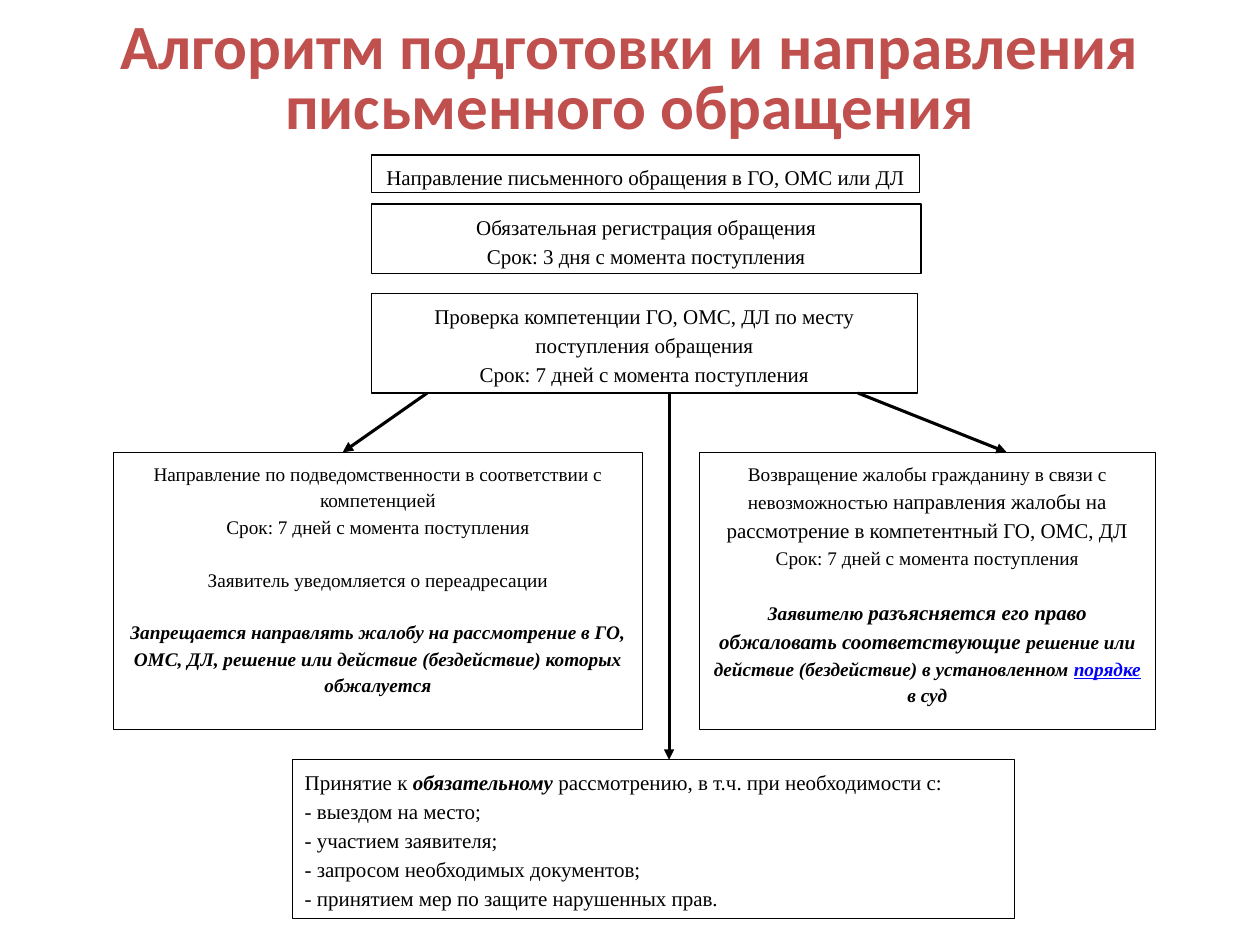
from lxml import etree
from pptx import Presentation
from pptx.dml.color import RGBColor
from pptx.enum.shapes import MSO_CONNECTOR, MSO_SHAPE
from pptx.enum.text import MSO_ANCHOR, MSO_AUTO_SIZE, PP_ALIGN
from pptx.oxml.ns import qn
from pptx.util import Pt

PX = 9144
RED = RGBColor(0xC0, 0x50, 0x4D)
BLACK = RGBColor(0, 0, 0)
WHITE = RGBColor(255, 255, 255)
BLUE = RGBColor(0, 0, 255)
LEFT, MID = PP_ALIGN.LEFT, PP_ALIGN.CENTER
RECT, LINE = MSO_SHAPE.RECTANGLE, MSO_CONNECTOR.STRAIGHT
TOP, CENTER = MSO_ANCHOR.TOP, MSO_ANCHOR.MIDDLE
FIXED = MSO_AUTO_SIZE.NONE

WEEK = "Срок: 7 дней с момента поступления"
STRONG = {"bold": True, "italic": True}
BIG = {"size": 12}
GAP = {"gap": 15}

STEPS = [
    ((295, 123, 435, 30), ["Направление письменного обращения в ГО, ОМС или ДЛ"]),
    ((295, 162, 436, 55), ["Обязательная регистрация обращения",
                           "Срок: 3 дня с момента поступления"]),
    ((295, 233, 433, 79), ["Проверка компетенции ГО, ОМС, ДЛ по месту поступления обращения",
                           WEEK]),
]
FORWARD = [
    "Направление по подведомственности в соответствии с компетенцией",
    WEEK,
    [("Заявитель уведомляется о переадресации", GAP)],
    [("Запрещается направлять жалобу на рассмотрение в ГО, ОМС, ДЛ, "
      "решение или действие (бездействие) которых обжалуется", STRONG | GAP)],
]
REFUSE = [
    [("Возвращение жалобы гражданину в связи с невозможностью ", {}),
     ("направления жалобы на рассмотрение в компетентный ГО, ОМС, ДЛ", BIG)],
    WEEK,
    [("Заявителю ", STRONG | GAP),
     ("разъясняется его право обжаловать соответствующие ", STRONG | BIG),
     ("решение или действие (бездействие) в установленном ", STRONG),
     ("порядке", STRONG | {"color": BLUE, "under": True}),
     (" в суд", STRONG)],
]
ACCEPT = [
    [("Принятие к ", {}), ("обязательному", STRONG),
     (" рассмотрению, в т.ч. при необходимости с:", {})],
    "-\u00a0выездом на место;",
    "-\u00a0участием заявителя;",
    "-\u00a0запросом необходимых документов;",
    "-\u00a0принятием мер по защите нарушенных прав.",
]
ARROWS = [(339, 312, 272, 359), (681, 312, 799, 359), (531, 312, 531, 603)]


def style(run, size, face, color=BLACK, bold=False, italic=False, under=False, gap=0):
    """Format one run; gap belongs to its paragraph."""
    font = run.font
    font.size, font.name = Pt(size), face
    font.bold, font.italic, font.underline = bold, italic, under
    font.color.rgb = color


def write(shape, paras, align=MID, space=1.15, anchor=TOP, size=12,
          face="Times New Roman", **kw):
    """Fill a shape with paragraphs of plain or mixed runs."""
    frame = shape.text_frame
    frame.word_wrap, frame.auto_size = True, FIXED
    frame.vertical_anchor = anchor
    for i, runs in enumerate(paras):
        para = frame.add_paragraph() if i else frame.paragraphs[0]
        para.alignment, para.line_spacing = align, space
        if isinstance(runs, str):
            runs = [(runs, {})]
        para.space_before = Pt(runs[0][1].get("gap", 0))
        for text, form in runs:
            run = para.add_run()
            run.text = text
            style(run, **({"size": size, "face": face} | kw | form))


def head(slide, box, text):
    """Place and format the title."""
    title = slide.shapes.title
    title.left, title.top, title.width, title.height = (v * PX for v in box)
    write(title, [text], space=0.8, anchor=CENTER, size=36, face="Calibri",
          color=RED, bold=True)


def block(slide, box, paras, **kw):
    """Draw one outlined box with its text."""
    shape = slide.shapes.add_shape(RECT, *(v * PX for v in box))
    shape.shadow.inherit = False
    shape.fill.solid()
    shape.fill.fore_color.rgb = WHITE
    shape.line.color.rgb = BLACK
    shape.line.width = Pt(0.75)
    write(shape, paras, **kw)


def arrow(slide, ends):
    """Draw a straight arrow between two points."""
    line = slide.shapes.add_connector(LINE, *(v * PX for v in ends))
    line.line.color.rgb = BLACK
    line.line.width = Pt(1.75)
    etree.SubElement(line.line._get_or_add_ln(), qn("a:tailEnd"), type="triangle")
    etree.SubElement(line._element.spPr, qn("a:effectLst"))


def main():
    """Build the slide and save it."""
    deck = Presentation()
    deck.slide_width, deck.slide_height = 1000 * PX, 750 * PX
    slide = deck.slides.add_slide(deck.slide_layouts[5])
    head(slide, (50, 30, 900, 69),
         "Алгоритм подготовки и направления письменного обращения")
    for box, paras in STEPS:
        block(slide, box, paras)
    block(slide, (90, 359, 420, 220), FORWARD, size=11)
    block(slide, (555, 359, 362, 220), REFUSE, size=11)
    block(slide, (232, 603, 573, 126), ACCEPT, align=LEFT)
    for ends in ARROWS:
        arrow(slide, ends)
    deck.save("out.pptx")


if __name__ == "__main__":
    main()
